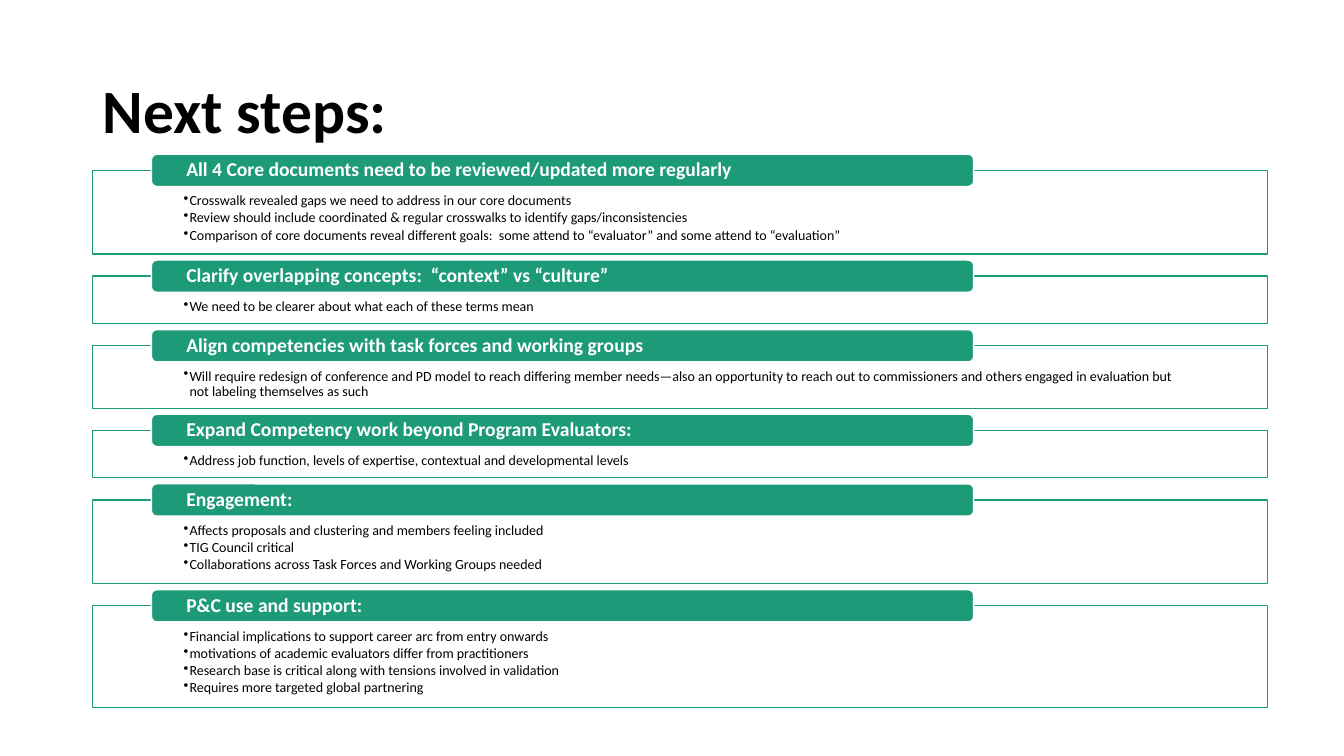
from dataclasses import dataclass

from lxml.etree import SubElement
from pptx import Presentation
from pptx.dml.color import RGBColor
from pptx.enum.shapes import MSO_SHAPE
from pptx.enum.text import MSO_ANCHOR, PP_ALIGN
from pptx.oxml.ns import qn
from pptx.util import Inches, Pt

GREEN = RGBColor(0x1D, 0x9A, 0x78)
WHITE = RGBColor(0xFF, 0xFF, 0xFF)
BLACK = RGBColor(0x00, 0x00, 0x00)

SLIDE_WIDTH, SLIDE_HEIGHT = 13.33, 7.5
PANEL_GAP = 0.22
TAB_HEIGHT = 0.32
TAB_INDENT_SHARE = 0.05
TAB_WIDTH_SHARE = 0.7
ONE_LINE_PANEL = 0.47
EXTRA_BULLET = 0.18
EXTRA_WRAPPED_LINE = 0.15
BULLET_INDENT = Inches(0.06)

TITLE_FONT = {"name": "Calibri", "size": Pt(44), "bold": True}
TAB_FONT = {"name": "Calibri", "size": Pt(14), "bold": True}
BULLET_FONT = {"name": "Calibri", "size": Pt(10), "bold": False}

LEFT_TEXT = {"alignment": PP_ALIGN.LEFT, "line_spacing": 0.9, "space_before": Pt(0)}
BULLET_TEXT = {**LEFT_TEXT, "space_after": Pt(1.5)}

TITLE_FRAME = {"vertical_anchor": MSO_ANCHOR.MIDDLE, "word_wrap": True}
TAB_FRAME = {
    **TITLE_FRAME,
    "margin_left": Inches(0.33),
    "margin_right": Inches(0.33),
    "margin_top": 0,
    "margin_bottom": 0,
}
PANEL_FRAME = {
    "vertical_anchor": MSO_ANCHOR.TOP,
    "word_wrap": True,
    "margin_left": Inches(0.9),
    "margin_right": Inches(0.9),
    "margin_top": Inches(0.23),
    "margin_bottom": Inches(0.08),
}

STEPS = [
    ("All 4 Core documents need to be reviewed/updated more regularly", [
        "Crosswalk revealed gaps we need to address in our core documents",
        "Review should include coordinated & regular crosswalks to identify gaps/inconsistencies",
        "Comparison of core documents reveal different goals:  some attend to “evaluator” "
        "and some attend to “evaluation”",
    ], 0),
    ("Clarify overlapping concepts:  “context” vs “culture”", [
        "We need to be clearer about what each of these terms mean",
    ], 0),
    ("Align competencies with task forces and working groups", [
        "Will require redesign of conference and PD model to reach differing member needs—also "
        "an opportunity to reach out to commissioners and others engaged in evaluation but "
        "not labeling themselves as such",
    ], 1),
    ("Expand Competency work beyond Program Evaluators:", [
        "Address job function, levels of expertise, contextual and developmental levels",
    ], 0),
    ("Engagement:", [
        "Affects proposals and clustering and members feeling included",
        "TIG Council critical",
        "Collaborations across Task Forces and Working Groups needed",
    ], 0),
    ("P&C use and support:", [
        "Financial implications to support career arc from entry onwards",
        "motivations of academic evaluators differ from practitioners",
        "Research base is critical along with tensions involved in validation",
        "Requires more targeted global partnering",
    ], 0),
]


@dataclass
class Box:
    left: float
    top: float
    width: float
    height: float

    def lengths(self):
        return [Inches(value) for value in (self.left, self.top, self.width, self.height)]


def apply_format(target, values):
    for name, value in values.items():
        setattr(target, name, value)


def write_text(shape, lines, frame_format, para_format, font_format, color):
    frame = shape.text_frame
    apply_format(frame, frame_format)
    for index, line in enumerate(lines):
        para = frame.add_paragraph() if index else frame.paragraphs[0]
        apply_format(para, para_format)
        span = para.add_run()
        span.text = line
        apply_format(span.font, font_format)
        span.font.color.rgb = color


def add_bullet(para):
    properties = para._p.get_or_add_pPr()
    properties.set("marL", str(BULLET_INDENT))
    properties.set("indent", str(-BULLET_INDENT))
    SubElement(properties, qn("a:buChar")).set("char", "•")


def add_block(page, kind, box, fill, outline):
    shape = page.shapes.add_shape(kind, *box.lengths())
    shape.shadow.inherit = False
    shape.fill.solid()
    shape.fill.fore_color.rgb = fill
    shape.line.color.rgb = outline
    shape.line.width = Pt(1)
    return shape


def place_title(page, box, text):
    title = page.shapes.title
    apply_format(title, dict(zip(("left", "top", "width", "height"), box.lengths())))
    write_text(title, [text], TITLE_FRAME, LEFT_TEXT, TITLE_FONT, BLACK)


def place_step(page, box, heading, bullets):
    panel = add_block(page, MSO_SHAPE.RECTANGLE, box, WHITE, GREEN)
    write_text(panel, bullets, PANEL_FRAME, BULLET_TEXT, BULLET_FONT, BLACK)
    for para in panel.text_frame.paragraphs:
        add_bullet(para)
    tab_box = Box(
        box.left + box.width * TAB_INDENT_SHARE,
        box.top - TAB_HEIGHT / 2,
        box.width * TAB_WIDTH_SHARE,
        TAB_HEIGHT,
    )
    tab = add_block(page, MSO_SHAPE.ROUNDED_RECTANGLE, tab_box, GREEN, WHITE)
    write_text(tab, [heading], TAB_FRAME, LEFT_TEXT, TAB_FONT, WHITE)


def place_steps(page, left, top, width):
    for heading, bullets, wrapped_lines in STEPS:
        height = (
            ONE_LINE_PANEL
            + EXTRA_BULLET * (len(bullets) - 1)
            + EXTRA_WRAPPED_LINE * wrapped_lines
        )
        place_step(page, Box(left, top, width, height), heading, bullets)
        top += height + PANEL_GAP


def main():
    deck = Presentation()
    deck.slide_width = Inches(SLIDE_WIDTH)
    deck.slide_height = Inches(SLIDE_HEIGHT)
    page = deck.slides.add_slide(deck.slide_layouts.get_by_name("Title Only"))
    place_title(page, Box(0.92, 0.4, 11.5, 1.45), "Next steps:")
    place_steps(page, 0.92, 1.69, 11.65)
    deck.save("out.pptx")


if __name__ == "__main__":
    main()
